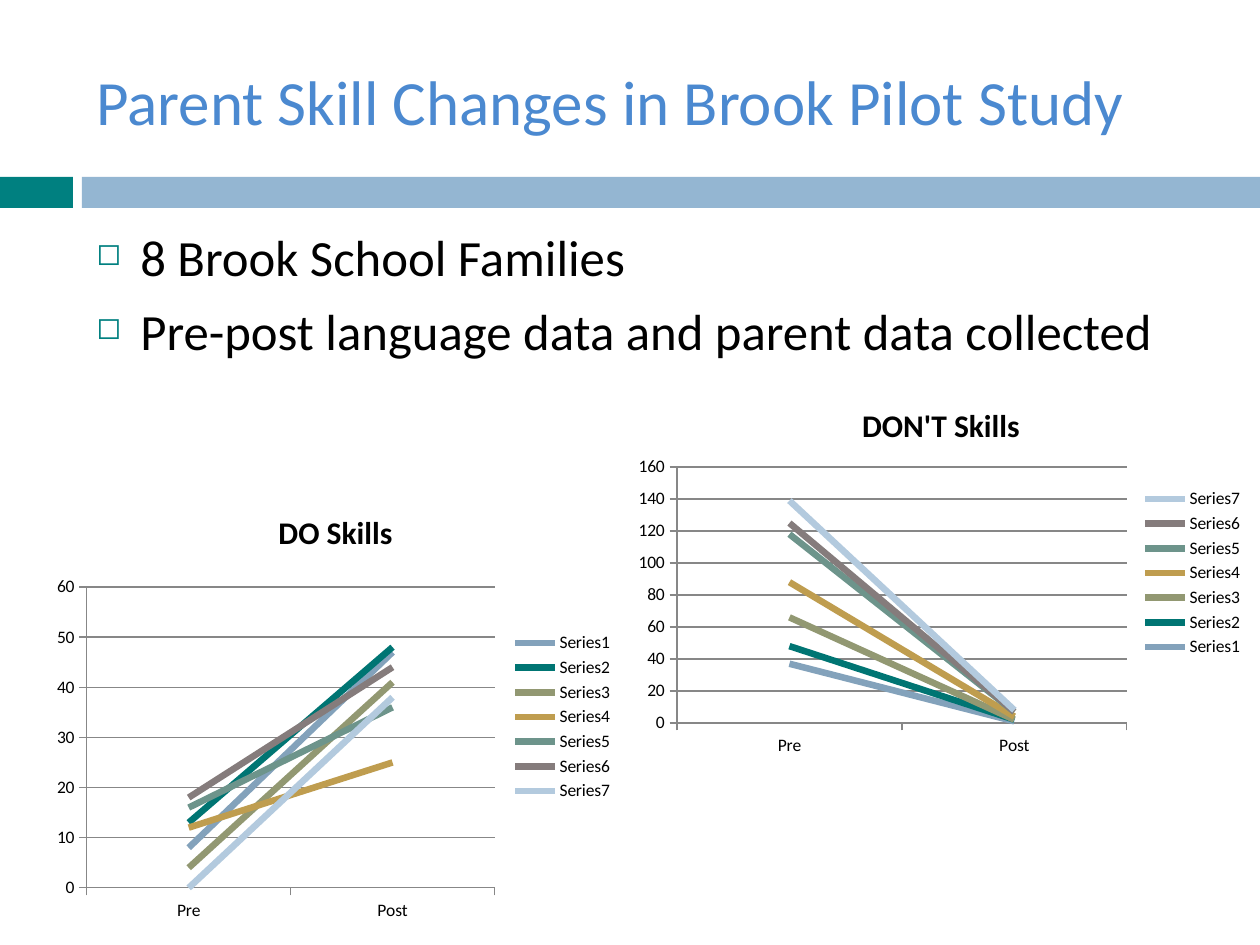
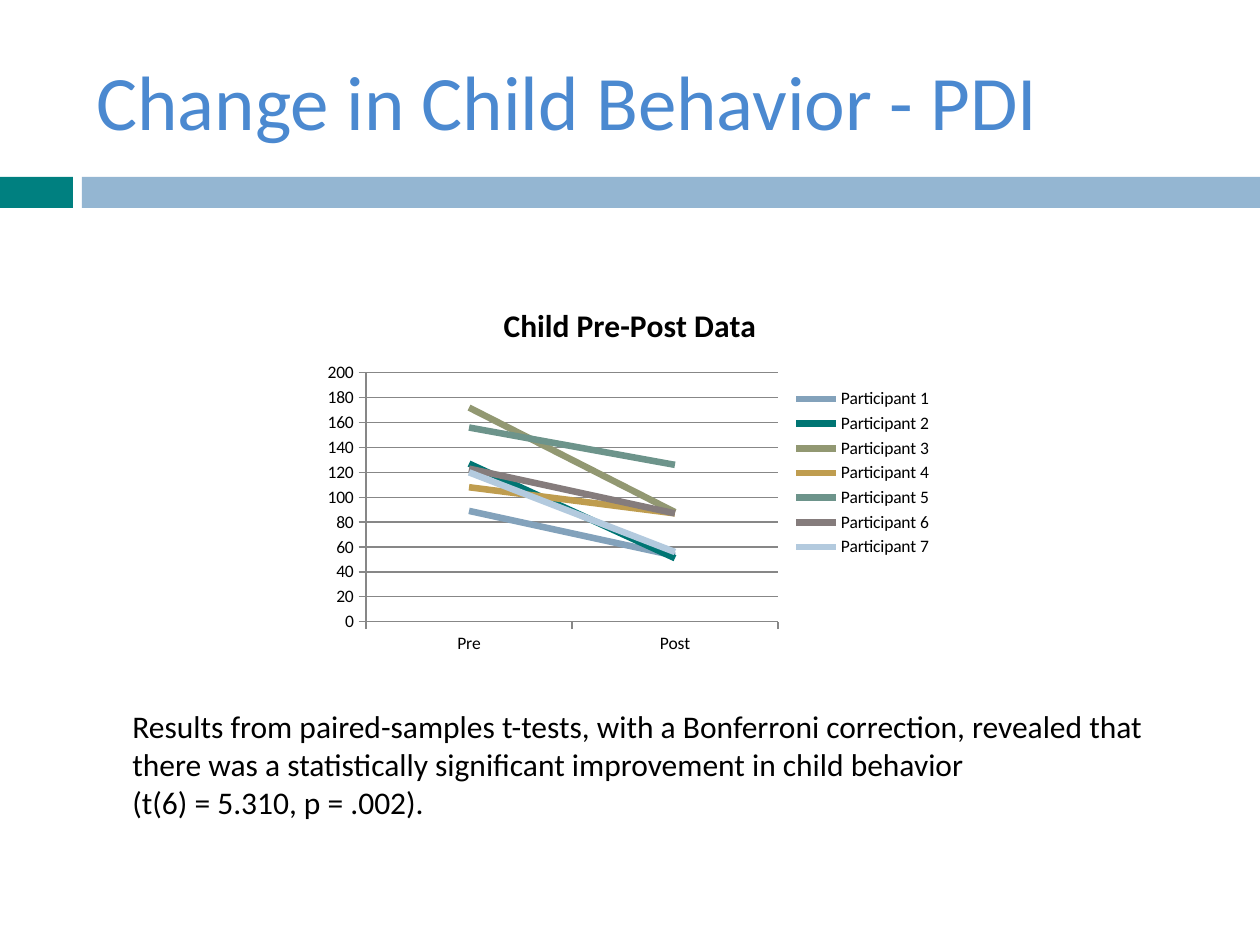
import pptx
import pptx.chart.data
import pptx.dml.color
import pptx.enum.chart
import pptx.enum.shapes
import pptx.enum.text
import pptx.oxml
import pptx.oxml.ns
import pptx.util

PX = 914400 / 126
FONT = "Calibri"

RGBColor = pptx.dml.color.RGBColor
TEAL = RGBColor(0x00, 0x80, 0x80)
BAND_BLUE = RGBColor(0x94, 0xB6, 0xD2)
TITLE_BLUE = RGBColor(0x4B, 0x89, 0xD0)
BLACK = RGBColor(0x00, 0x00, 0x00)
AXIS_GRAY = RGBColor(0x87, 0x87, 0x87)
SERIES_COLORS = [
    RGBColor(0x83, 0xA2, 0xBB),
    RGBColor(0x00, 0x75, 0x73),
    RGBColor(0x92, 0x98, 0x72),
    RGBColor(0xBF, 0x9D, 0x4F),
    RGBColor(0x6D, 0x94, 0x8B),
    RGBColor(0x85, 0x7C, 0x7C),
    RGBColor(0xB3, 0xCA, 0xDE),
]

LINE = pptx.enum.chart.XL_CHART_TYPE.LINE
LINE_STACKED = pptx.enum.chart.XL_CHART_TYPE.LINE_STACKED

DO_SKILLS = [(8, 47), (13, 48), (4, 41), (12, 25), (16, 36), (18, 44), (0, 38)]
DONT_SKILLS = [(37, 1), (11, 1), (18, 0), (22, 2), (30, 3), (7, 0), (14, 1)]
CHILD_SCORES = [(89, 53), (127, 51), (172, 88), (108, 87), (156, 126), (123, 87), (120, 56)]


def emu(box):
    """Turn lengths in px into EMU."""
    return [pptx.util.Emu(round(v * PX)) for v in box]


def style_font(font, size, color=BLACK, bold=False):
    font.name = FONT
    font.size = pptx.util.Pt(size)
    font.bold = bold
    font.color.rgb = color


def add_text(slide, box, lines, size, color=BLACK, anchor=pptx.enum.text.MSO_ANCHOR.TOP):
    tf = slide.shapes.add_textbox(*emu(box)).text_frame
    tf.word_wrap = True
    tf.vertical_anchor = anchor
    for i, line in enumerate(lines):
        p = tf.add_paragraph() if i else tf.paragraphs[0]
        r = p.add_run()
        r.text = line
        style_font(r.font, size, color)
    return tf


def add_bullets(slide, box, lines, size):
    ns = pptx.oxml.ns.nsdecls("a")
    indent = emu([44])[0]
    for p in add_text(slide, box, lines, size).paragraphs:
        p.space_before = pptx.util.Pt(7)
        pPr = p._p.get_or_add_pPr()
        pPr.set("marL", str(indent))
        pPr.set("indent", str(-indent))
        for xml in (
            f'<a:buClr {ns}><a:srgbClr val="{TEAL}"/></a:buClr>',
            f'<a:buSzPct {ns} val="60000"/>',
            f'<a:buChar {ns} char="◻"/>',
        ):
            pPr.append(pptx.oxml.parse_xml(xml))


def add_title_slide_frame(prs, title, size):
    """Add a slide with its title and the two-part band below it."""
    slide = prs.slides.add_slide(prs.slide_layouts[6])
    for left, width, color in ((0, 73, TEAL), (82, 1178, BAND_BLUE)):
        sp = slide.shapes.add_shape(
            pptx.enum.shapes.MSO_SHAPE.RECTANGLE, *emu((left, 177, width, 31)))
        sp.shadow.inherit = False
        sp.fill.solid()
        sp.fill.fore_color.rgb = color
        sp.line.fill.background()
    add_text(slide, (84, 32, 1124, 136), [title], size, TITLE_BLUE,
             pptx.enum.text.MSO_ANCHOR.MIDDLE)
    return slide


def set_plot_layout(chart, box, plot):
    """Fix the inner plot area; plot is in px relative to the chart box."""
    _, _, width, height = box
    shares = zip("xywh", plot, (width, height, width, height))
    values = "".join(f'<c:{k} val="{v / whole:.3f}"/>' for k, v, whole in shares)
    area = chart.element.xpath("c:chart/c:plotArea")[0]
    for layout in area.xpath("c:layout"):
        area.remove(layout)
    area.insert(0, pptx.oxml.parse_xml(
        f'<c:layout {pptx.oxml.ns.nsdecls("c")}><c:manualLayout>'
        '<c:layoutTarget val="inner"/><c:xMode val="edge"/><c:yMode val="edge"/>'
        f'{values}</c:manualLayout></c:layout>'))


def style_axes(chart, top, step):
    axis = chart.value_axis
    axis.minimum_scale, axis.maximum_scale, axis.major_unit = 0, top, step
    axis.has_major_gridlines = True
    axis.tick_labels.number_format = "0"
    axis.tick_labels.number_format_is_linked = False
    for part in (axis, chart.category_axis):
        part.major_tick_mark = pptx.enum.chart.XL_TICK_MARK.OUTSIDE
    for line in (axis.format.line, chart.category_axis.format.line,
                 axis.major_gridlines.format.line):
        line.color.rgb = AXIS_GRAY
        line.width = pptx.util.Pt(0.75)


def add_pre_post_chart(slide, box, plot, title, prefix, scores, top, step, kind=LINE):
    data = pptx.chart.data.CategoryChartData()
    data.categories = ["Pre", "Post"]
    for n, pair in enumerate(scores, 1):
        data.add_series(f"{prefix}{n}", pair)
    chart = slide.shapes.add_chart(kind, *emu(box), data).chart
    style_font(chart.font, 10)
    chart.has_title = True
    r = chart.chart_title.text_frame.paragraphs[0].add_run()
    r.text = title
    style_font(r.font, 18, bold=True)
    chart.chart_title.include_in_layout = False
    chart.has_legend = True
    chart.legend.position = pptx.enum.chart.XL_LEGEND_POSITION.RIGHT
    chart.legend.include_in_layout = False
    chart.plots[0].vary_by_categories = False
    for series, color in zip(chart.plots[0].series, SERIES_COLORS):
        series.smooth = False
        series.marker.style = pptx.enum.chart.XL_MARKER_STYLE.NONE
        series.format.line.color.rgb = color
        series.format.line.width = pptx.util.Pt(3.75)
    style_axes(chart, top, step)
    set_plot_layout(chart, box, plot)


def add_parent_skills_slide(prs):
    slide = add_title_slide_frame(prs, "Parent Skill Changes in Brook Pilot Study", 36)
    add_bullets(slide, (84, 220, 1124, 620), [
        "8 Brook School Families",
        "Pre-post language data and parent data collected",
    ], 29)
    add_pre_post_chart(slide, (45, 489, 581, 456), (42, 98, 408, 301),
                       "DO Skills", "Series", DO_SKILLS, 60, 10)
    add_pre_post_chart(slide, (626, 384, 630, 378), (51, 83, 450, 256),
                       "DON'T Skills", "Series", DONT_SKILLS, 160, 20, LINE_STACKED)


def add_child_behavior_slide(prs):
    slide = add_title_slide_frame(prs, "Change in Child Behavior - PDI", 44)
    add_pre_post_chart(slide, (315, 284, 630, 378), (51, 89, 412, 249),
                       "Child Pre-Post Data", "Participant ", CHILD_SCORES, 200, 20)
    add_text(slide, (120, 701, 1041, 127), [
        "Results from paired-samples t-tests, with a Bonferroni correction, revealed that "
        "there was a statistically significant improvement in child behavior",
        "(t(6) = 5.310, p = .002).",
    ], 18)


def main():
    prs = pptx.Presentation()
    prs.slide_width, prs.slide_height = emu((1260, 945))
    add_parent_skills_slide(prs)
    add_child_behavior_slide(prs)
    prs.save("out.pptx")


if __name__ == "__main__":
    main()
